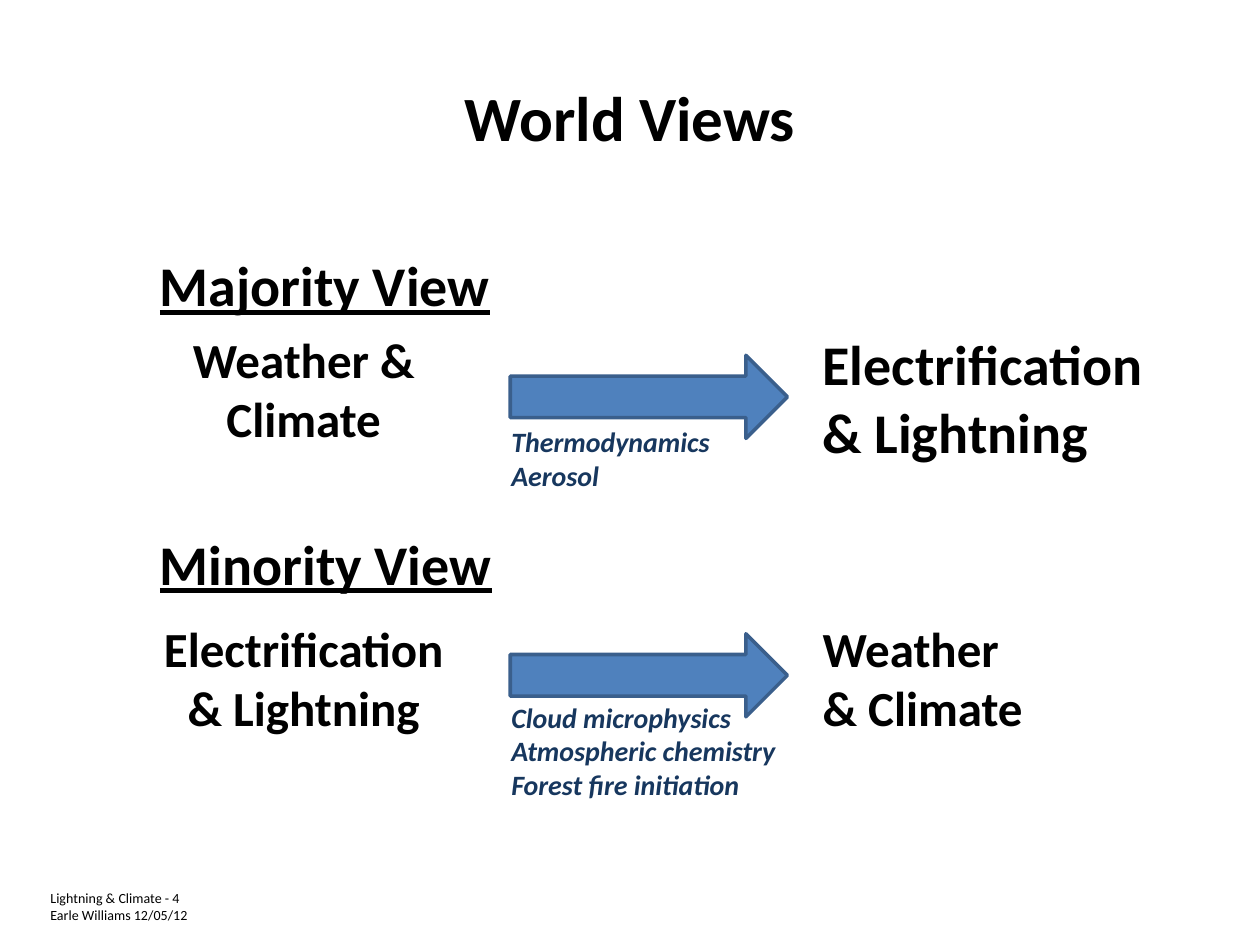
from pptx import Presentation
from pptx.dml.color import RGBColor
from pptx.enum.shapes import MSO_SHAPE
from pptx.enum.text import MSO_ANCHOR, PP_ALIGN
from pptx.util import Inches, Pt

TITLE = "World Views"
FOOTER = ["Lightning & Climate - 4", "Earle Williams 12/05/12"]
VIEWS = [
    {
        "top": 1.94,
        "heading": (["Majority View"], 2.85),
        "cause": (["Weather &", "Climate"], 1.98),
        "effect": (["Electrification", "& Lightning"], 2.77),
        "effect_size": 32,
        "links": (["Thermodynamics", "Aerosol"], 1.81),
        "body_offset": 0.63,
        "links_offset": 1.38,
    },
    {
        "top": 4.15,
        "heading": (["Minority View"], 2.86),
        "cause": (["Electrification", "& Lightning"], 2.45),
        "effect": (["Weather", "& Climate"], 1.81),
        "effect_size": 28,
        "links": (
            ["Cloud microphysics", "Atmospheric chemistry", "Forest fire initiation"],
            2.35,
        ),
        "body_offset": 0.71,
        "links_offset": 1.36,
    },
]
HEADING_LEFT, CAUSE_CENTRE, LINKS_LEFT, EFFECT_LEFT = 1.17, 2.41, 3.96, 6.43
ARROW_LEFT, ARROW_OFFSET, ARROW_WIDTH, ARROW_HEIGHT = 4.05, 0.88, 2.2, 0.66
LINE_SPACING, BOX_PADDING = 1.22, 0.1


def color(value):
    return RGBColor.from_string(value)


def write(frame, lines, size, fill="000000", bold=True, italic=False,
          underline=False, align=PP_ALIGN.LEFT):
    for index, line in enumerate(lines):
        paragraph = frame.paragraphs[0] if index == 0 else frame.add_paragraph()
        paragraph.alignment = align
        run = paragraph.add_run()
        run.text = line
        font = run.font
        font.name, font.size = "Calibri", Pt(size)
        font.bold, font.italic, font.underline = bold, italic, underline
        font.color.rgb = color(fill)


def add_text(slide, content, left, top, size, **text_format):
    lines, width = content
    height = len(lines) * size * LINE_SPACING / 72 + BOX_PADDING
    shape = slide.shapes.add_textbox(
        Inches(left), Inches(top), Inches(width), Inches(height))
    shape.text_frame.word_wrap = False
    write(shape.text_frame, lines, size, **text_format)


def add_arrow(slide, top):
    shape = slide.shapes.add_shape(
        MSO_SHAPE.RIGHT_ARROW, Inches(ARROW_LEFT), Inches(top),
        Inches(ARROW_WIDTH), Inches(ARROW_HEIGHT))
    shape.shadow.inherit = False
    shape.fill.solid()
    shape.fill.fore_color.rgb = color("4F81BD")
    shape.line.color.rgb = color("3A5F8C")
    shape.line.width = Pt(2)


def add_view(slide, view):
    top = view["top"]
    body_top = top + view["body_offset"]
    cause_left = CAUSE_CENTRE - view["cause"][1] / 2
    add_text(slide, view["heading"], HEADING_LEFT, top, 32, underline=True)
    add_text(slide, view["cause"], cause_left, body_top, 28, align=PP_ALIGN.CENTER)
    add_text(slide, view["effect"], EFFECT_LEFT, body_top, view["effect_size"])
    add_arrow(slide, top + ARROW_OFFSET)
    add_text(slide, view["links"], LINKS_LEFT, top + view["links_offset"], 16,
             fill="17375E", italic=True)


def add_title(slide):
    title = slide.shapes.title
    title.left, title.top = Inches(0.5), Inches(0.3)
    title.width, title.height = Inches(9), Inches(1.25)
    title.text_frame.vertical_anchor = MSO_ANCHOR.MIDDLE
    write(title.text_frame, [TITLE], 36, align=PP_ALIGN.CENTER)


def add_footer(slide):
    footer = slide.shapes.add_textbox(
        Inches(0.35), Inches(7.06), Inches(1.49), Inches(0.44))
    frame = footer.text_frame
    frame.word_wrap = True
    frame.margin_left = Inches(0.05)
    frame.margin_top = frame.margin_right = frame.margin_bottom = 0
    write(frame, FOOTER, 8, bold=False)


def main():
    presentation = Presentation()
    presentation.slide_width, presentation.slide_height = Inches(10), Inches(7.5)
    slide = presentation.slides.add_slide(presentation.slide_layouts[5])
    add_footer(slide)
    add_title(slide)
    for view in VIEWS:
        add_view(slide, view)
    presentation.save("out.pptx")


if __name__ == "__main__":
    main()
